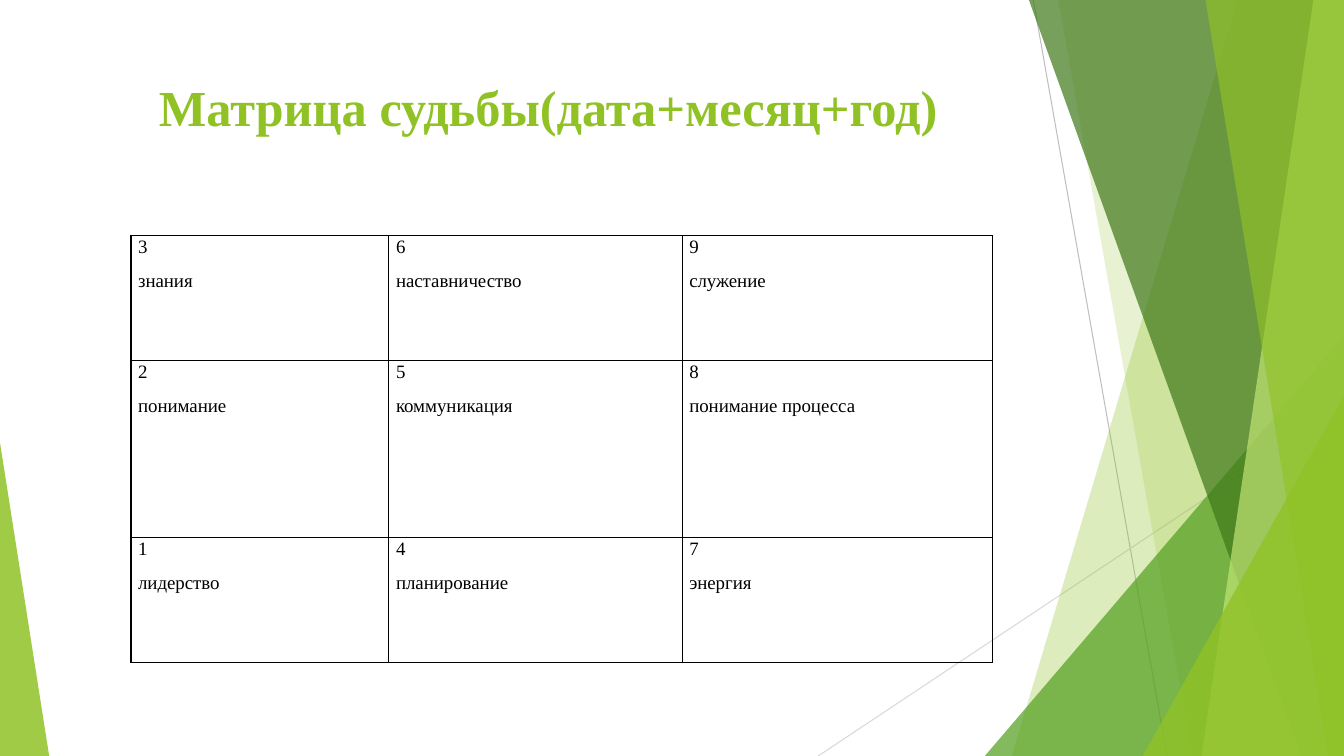
from lxml.etree import SubElement
from pptx import Presentation
from pptx.dml.color import RGBColor
from pptx.enum.shapes import MSO_CONNECTOR, MSO_SHAPE
from pptx.enum.text import MSO_ANCHOR, PP_ALIGN
from pptx.oxml.ns import qn
from pptx.util import Cm, Pt

WIDTH, HEIGHT = 33.87, 19.05
FONT = "Times New Roman"
BLACK = RGBColor(0x00, 0x00, 0x00)
LIME = RGBColor(0x90, 0xC2, 0x26)
GREEN = RGBColor(0x54, 0xA0, 0x21)
DARK_GREEN = RGBColor(0x3F, 0x78, 0x19)
PALE_LIME = RGBColor(0xC0, 0xE4, 0x74)
GREY = RGBColor(0xBF, 0xBF, 0xBF)
LIGHT_GREY = RGBColor(0xD9, 0xD9, 0xD9)

# Numbers run upwards in each column, starting from the left one
MEANINGS = [
    ["лидерство", "понимание", "знания"],
    ["планирование", "коммуникация", "наставничество"],
    ["энергия", "понимание процесса", "служение"],
]
COLUMN_WIDTHS = [6.5, 7.39, 7.82]
ROW_HEIGHTS = [3.15, 4.45, 3.15]


def paint(shape, color, opacity):
    """Fill a shape with a translucent colour, without outline or shadow."""
    shape.shadow.inherit = False
    shape.line.fill.background()
    shape.fill.solid()
    shape.fill.fore_color.rgb = color
    color_element = shape.fill._xPr.find(qn("a:solidFill"))[0]
    SubElement(color_element, qn("a:alpha"), val=str(opacity * 1000))


def add_line(slide, start, end, color):
    line = slide.shapes.add_connector(
        MSO_CONNECTOR.STRAIGHT, *(Cm(value) for value in start + end))
    line.line.color.rgb = color
    line.line.width = Pt(0.75)
    SubElement(line._element.spPr, qn("a:effectLst"))


def add_band(slide, right, height, top_width, bottom_width, color, opacity):
    """Draw a full-height band whose left side slants."""
    builder = slide.shapes.build_freeform(Cm(right - top_width), 0)
    builder.add_line_segments([
        (Cm(right), 0),
        (Cm(right), Cm(height)),
        (Cm(right - bottom_width), Cm(height)),
    ], close=True)
    paint(builder.convert_to_shape(), color, opacity)


def add_corner(slide, left, bottom, width, height, apex, color, opacity):
    """Draw a right triangle standing on the bottom edge."""
    triangle = slide.shapes.add_shape(
        MSO_SHAPE.ISOSCELES_TRIANGLE,
        Cm(left), Cm(bottom - height), Cm(width), Cm(height))
    triangle.adjustments[0] = apex
    paint(triangle, color, opacity)


def add_decoration(slide, right, bottom):
    # Thin lines
    add_line(slide, (right - 7.83, 0), (right - 4.46, bottom), GREY)
    add_line(slide, (right, 10.24), (right - 13.25, bottom), LIGHT_GREY)
    # Facets on the right, from back to front
    add_band(slide, right, bottom, 2.68, 8.37, LIME, 30)
    add_band(slide, right, bottom, 7.2, 3.82, LIME, 20)
    add_corner(slide, right - 9.05, bottom, 9.05, 10.59, 1, GREEN, 72)
    add_band(slide, right, bottom, 7.94, 1.08, DARK_GREEN, 70)
    add_band(slide, right, bottom, 0.77, 3.59, PALE_LIME, 70)
    add_band(slide, right, bottom, 3.49, 0.39, LIME, 65)
    add_corner(slide, right - 5.07, bottom, 5.07, 9.07, 1, LIME, 80)
    # Wedge in the left corner
    add_corner(slide, 0, bottom, 1.24, 7.9, 0, LIME, 85)


def format_paragraph(paragraph, size, color, bold=False):
    paragraph.line_spacing = 1.07
    paragraph.space_after = Pt(8)
    font = paragraph.runs[0].font
    font.name, font.size, font.bold = FONT, Pt(size), bold
    font.color.rgb = color


def add_title(slide, left, top, width, height):
    title = slide.shapes.add_textbox(Cm(left), Cm(top), Cm(width), Cm(height))
    text_frame = title.text_frame
    text_frame.word_wrap = True
    text_frame.vertical_anchor = MSO_ANCHOR.TOP
    text_frame.text = "Матрица судьбы(дата+месяц+год)"
    paragraph = text_frame.paragraphs[0]
    paragraph.alignment = PP_ALIGN.CENTER
    format_paragraph(paragraph, 36, LIME, bold=True)


def format_cell(cell):
    cell.margin_left = cell.margin_right = Cm(0.18)
    cell.margin_top = cell.margin_bottom = 0
    properties = cell._tc.get_or_add_tcPr()
    for side in ("a:lnL", "a:lnR", "a:lnT", "a:lnB"):
        border = SubElement(properties, qn(side), w=str(Pt(1)))
        fill = SubElement(border, qn("a:solidFill"))
        SubElement(fill, qn("a:srgbClr"), val=str(BLACK))
    cell.fill.background()
    for paragraph in cell.text_frame.paragraphs:
        format_paragraph(paragraph, 13.5, BLACK)


def add_matrix(slide, left, top):
    table = slide.shapes.add_table(
        len(ROW_HEIGHTS), len(COLUMN_WIDTHS), Cm(left), Cm(top),
        Cm(sum(COLUMN_WIDTHS)), Cm(sum(ROW_HEIGHTS))).table
    table.first_row = table.horz_banding = False
    for row, height in zip(table.rows, ROW_HEIGHTS):
        row.height = Cm(height)
    for column, width in zip(table.columns, COLUMN_WIDTHS):
        column.width = Cm(width)
    row_count = len(ROW_HEIGHTS)
    for column_index, meanings in enumerate(MEANINGS):
        for step, meaning in enumerate(meanings):
            cell = table.cell(row_count - 1 - step, column_index)
            number = column_index * row_count + step + 1
            cell.text_frame.text = f"{number}\n{meaning}"
            format_cell(cell)


def main():
    presentation = Presentation()
    presentation.slide_width = Cm(WIDTH)
    presentation.slide_height = Cm(HEIGHT)
    slide = presentation.slides.add_slide(presentation.slide_layouts[6])
    add_decoration(slide, WIDTH, HEIGHT)
    add_title(slide, 1.88, 1.7, 23.88, 3.66)
    add_matrix(slide, 3.3, 5.94)
    presentation.save("out.pptx")


if __name__ == "__main__":
    main()
